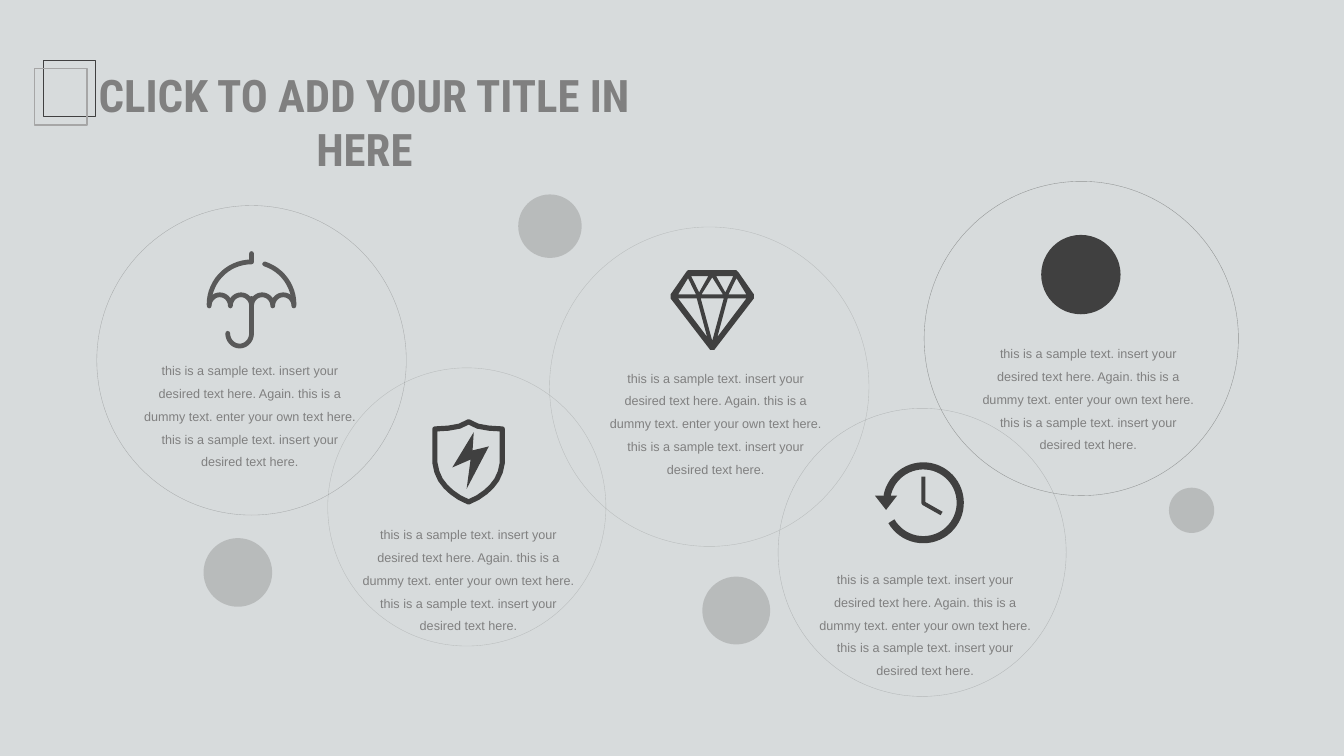
from math import cos, radians, sin

from pptx import Presentation
from pptx.dml.color import RGBColor
from pptx.enum import shapes, text
from pptx.oxml import xmlchemy
from pptx.oxml.ns import qn
from pptx.util import Cm, Pt

COLORS = {"back": "D7DBDC", "dark": "404040", "black": "262626",
          "umbrella": "595959", "light": "A6A6A6", "gray": "808080"}
SAMPLE = ("this is a sample text. insert your desired text here. Again. "
          "this is a dummy text. enter your own text here. "
          "this is a sample text. insert your desired text here.")


def paint(sp, fill=None, line=None, width=0, opacity=None):
    """Set fill and line; opacity in percent applies to the one that is set."""
    sp.shadow.inherit = False
    for part, color in ((sp.fill, fill), (sp.line.fill, line)):
        if color is None:
            part.background()
            continue
        part.solid()
        part.fore_color.rgb = RGBColor.from_string(COLORS[color])
    if line:
        sp.line.width = width
    if opacity:
        clr = next(sp._element.spPr.iter(qn("a:srgbClr")))
        alpha = xmlchemy.OxmlElement("a:alpha")
        alpha.set("val", str(opacity * 1000))
        clr.append(alpha)


def arc(x, y, rx, ry, start, end):
    """Points in steps of about 6 degrees, clockwise on screen from start to end."""
    n = max(2, round(abs(end - start) / 6))
    angles = [radians(start + (end - start) * i / n) for i in range(n + 1)]
    return [(x + rx * cos(a), y + ry * sin(a)) for a in angles]


prs = Presentation()
prs.slide_width, prs.slide_height = Cm(33.87), Cm(19.05)
s = prs.slides.add_slide(prs.slide_layouts[6])
s.background.fill.solid()
s.background.fill.fore_color.rgb = RGBColor.from_string(COLORS["back"])

# Corner squares
for left, top, color in ((1.09, 1.52, "dark"), (0.87, 1.73, "light")):
    sp = s.shapes.add_shape(shapes.MSO_SHAPE.RECTANGLE, Cm(left), Cm(top), Cm(1.32), Cm(1.42))
    paint(sp, line=color, width=Pt(1))

# Filled dots, the last one marking the upper right circle: left, top, diameter
dots = [(13.06, 4.9, 1.6, "gray", 35), (29.46, 12.29, 1.14, "gray", 35),
        (17.7, 14.53, 1.71, "gray", 35), (5.13, 13.56, 1.73, "gray", 35),
        (26.24, 5.92, 2, "dark", None)]
for left, top, size, color, opacity in dots:
    sp = s.shapes.add_shape(shapes.MSO_SHAPE.OVAL, Cm(left), Cm(top), Cm(size), Cm(size))
    paint(sp, fill=color, opacity=opacity)

# Large outlined circles
circles = [(2.44, 5.18, 7.8, "dark", 30), (8.26, 9.27, 7.01, "dark", 20),
           (13.85, 5.72, 8.05, "dark", 20), (19.61, 10.29, 7.26, "black", 20),
           (23.29, 4.57, 7.92, "black", 40)]
for left, top, size, color, opacity in circles:
    sp = s.shapes.add_shape(shapes.MSO_SHAPE.OVAL, Cm(left), Cm(top), Cm(size), Cm(size))
    paint(sp, line=color, width=Pt(0.25), opacity=opacity)

# Icon outlines in millimetres around each icon's centre
canopy = [arc(0, 0, 10.7, 10.7, 180, 270) + [(0, -12.8)],
          arc(0, 0, 10.7, 10.7, 288, 360)]
scallops = [arc(x, 0.4, 2.67, 2.8, 180, 360) for x in (-8, -2.67, 2.67, 8)]
handle = [(0, -1.5)] + arc(-3, 7.3, 3, 3.2, 0, 180)
umbrella = canopy + [sum(scallops, []), handle]

shield_half = [(0, -10), (2.3, -8.9), (5.1, -8.4), (8.5, -8.2), (8.5, 0.3), (8, 2.6),
               (7.1, 4.6), (5.8, 6.3), (4.3, 7.7), (2.3, 9.1), (0, 10.2)]
shield = shield_half + [(-x, y) for x, y in shield_half[-2:0:-1]]
bolt = [(1.3, -7.4), (-4.1, 1.5), (0.5, -0.5), (-0.5, 6.9), (5.1, -3.8), (1, -2.8)]

gem_half = [(6.1, -6.6), (6.6, -6.1), (10.5, -0.5), (10.5, 0.5), (0.5, 13.5)]
gem = gem_half + [(-x, y) for x, y in gem_half[::-1]]
middle_facets = [[(-2.9, 0.5), (2.9, 0.5), (0, 11.2)], [(-2.7, -0.5), (2.7, -0.5), (0, -4.8)]]
side_facets = [[(1, -5.1), (5.3, -5.1), (3.3, -1)],
               [(1.3, 10.2), (8.6, 0.5), (3.9, 0.5)],
               [(8.6, -0.5), (4.1, -0.5), (6.1, -4.6)]]
mirrored_facets = [[(-x, y) for x, y in facet] for facet in side_facets]
diamond = [gem] + middle_facets + side_facets + mirrored_facets

dial = arc(0, 0, 9.3, 9.3, 190, 510)
dial_arrow = [(-12.2, -1.8), (-6.6, -1.8), (-9.4, 1.8)]
hands = [(0, -6.6), (0, 0.1), (4.6, 2.7)]

# Centre, contours, closed, colour, stroke width in cm (0 means filled)
icons = [((6.34, 7.67), umbrella, False, "umbrella", 0.12),
         ((11.81, 11.63), [shield], True, "dark", 0.13),
         ((11.81, 11.63), [bolt], True, "dark", 0),
         ((17.95, 7.47), diamond, True, "dark", 0),
         ((23.27, 12.67), [dial], False, "dark", 0.18),
         ((23.27, 12.67), [dial_arrow], True, "dark", 0),
         ((23.27, 12.67), [hands], False, "dark", 0.1)]
for (x, y), contours, closed, color, stroke in icons:
    paths = [[(px * 100, py * 100) for px, py in c] for c in contours]
    builder = s.shapes.build_freeform(*paths[0][0], scale=Cm(0.001))
    for i, points in enumerate(paths):
        if i:
            builder.move_to(*points[0])
        builder.add_line_segments(points[1:], close=closed)
    sp = builder.convert_to_shape(Cm(x), Cm(y))
    if stroke:
        paint(sp, line=color, width=Cm(stroke))
        if color == "umbrella":
            sp.line._get_or_add_ln().set("cap", "rnd")
    else:
        paint(sp, fill=color)

# Captions and title: left, top, width, height, wording, font, size, bold, line spacing
captions = [(3.3, 8.84), (8.81, 12.97), (15.04, 9.02), (20.32, 14.1), (24.43, 8.41)]
boxes = [(x, y, 5.99, 3.12, SAMPLE, "Arial", 9, False, 1.5) for x, y in captions]
boxes.append((2.11, 1.58, 14.15, 2.97, "CLICK TO ADD YOUR TITLE IN HERE",
              "Roboto Condensed", 32, True, 1.0))
for left, top, width, height, wording, font, size, bold, spacing in boxes:
    tf = s.shapes.add_textbox(Cm(left), Cm(top), Cm(width), Cm(height)).text_frame
    tf.word_wrap = True
    p = tf.paragraphs[0]
    p.alignment = text.PP_ALIGN.CENTER
    p.line_spacing = spacing
    r = p.add_run()
    r.text = wording
    r.font.name, r.font.size, r.font.bold = font, Pt(size), bold
    r.font.color.rgb = RGBColor.from_string(COLORS["gray"])

prs.save("out.pptx")
